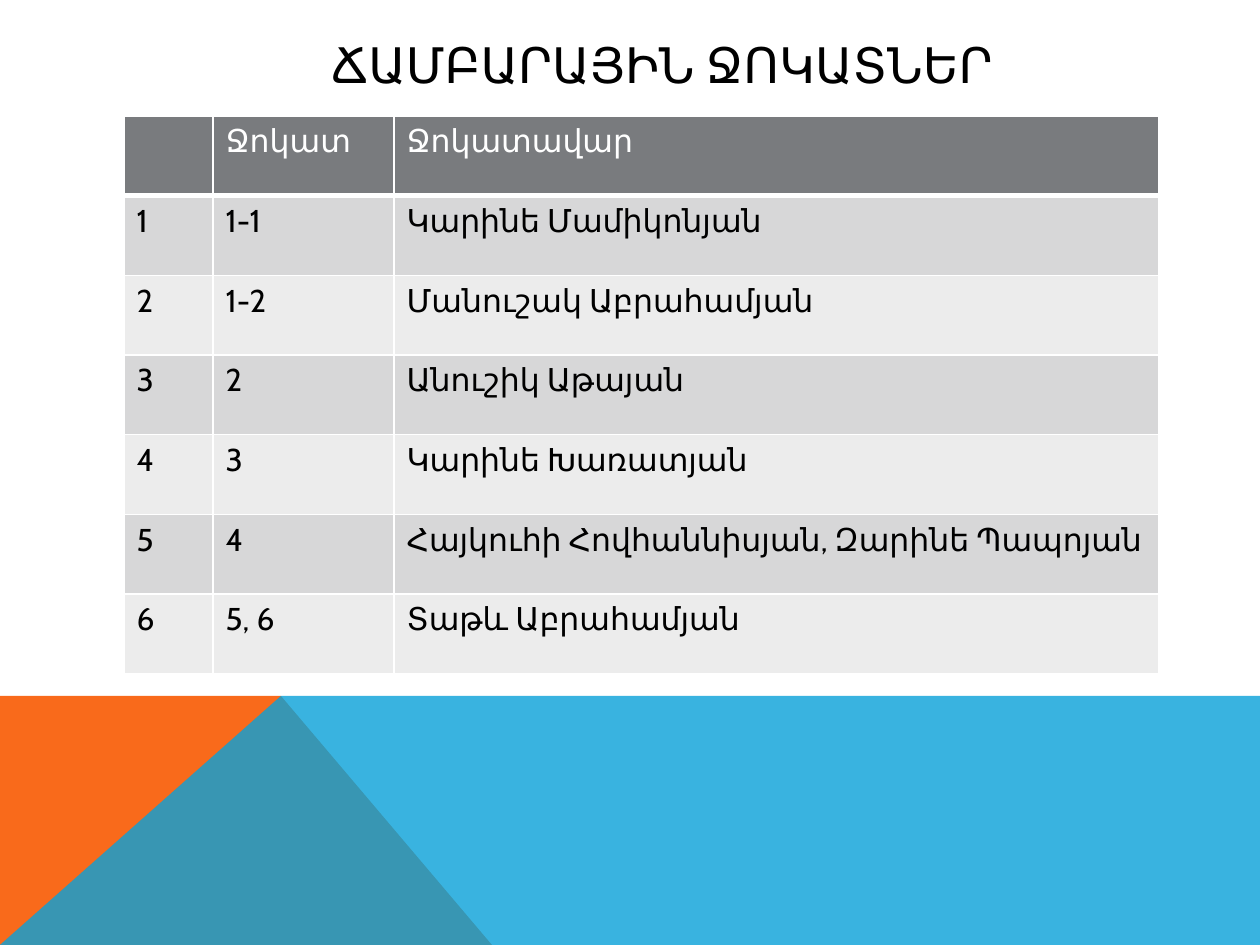
"""Build a slide with the table of camp groups and their leaders."""
from lxml import etree
from pptx import Presentation
from pptx import util as u
from pptx.dml.color import RGBColor
from pptx.enum import text
from pptx.oxml import ns

PX = 914400 / 126
FONT = "Cabin"
COLORS = {
    "white": "FFFFFF",
    "black": "000000",
    "orange": "F96A1B",
    "blue": "08A1D9",
    "header": "797B7E",
    "odd": "D7D7D8",
    "even": "ECECEC",
}
COLUMN_WIDTHS = [89, 181, 765]
HEADER = ["", "Ջոկատ", "Ջոկատավար"]
GROUPS = [
    ("1-1", "Կարինե Մամիկոնյան"),
    ("1-2", "Մանուշակ Աբրահամյան"),
    ("2", "Անուշիկ Աթայան"),
    ("3", "Կարինե Խառատյան"),
    ("4", "Հայկուհի Հովհաննիսյան, Զարինե Պապոյան"),
    ("5, 6", "Տաթև Աբրահամյան"),
]


def px(length):
    return u.Emu(round(length * PX))


def color(name):
    return RGBColor.from_string(COLORS[name])


def add_run(paragraph, words, size, color_name):
    run = paragraph.add_run()
    run.text = words
    run.font.name = FONT
    run.font.size = u.Pt(size)
    run.font.bold = False
    run.font.color.rgb = color(color_name)


def add_polygon(slide, points, color_name, opacity=100):
    builder = slide.shapes.build_freeform(*points[0], scale=PX)
    builder.add_line_segments(points[1:], close=True)
    shape = builder.convert_to_shape()
    shape.shadow.inherit = False
    shape.line.fill.background()
    shape.fill.solid()
    shape.fill.fore_color.rgb = color(color_name)
    if opacity < 100:
        fill_color = shape.element.spPr.find(".//" + ns.qn("a:srgbClr"))
        etree.SubElement(fill_color, ns.qn("a:alpha"), val=str(opacity * 1000))


def add_title(slide, words):
    shape = slide.shapes.add_textbox(px(144), px(26), px(1036), px(76))
    frame = shape.text_frame
    frame.word_wrap = True
    frame.vertical_anchor = text.MSO_ANCHOR.MIDDLE
    paragraph = frame.paragraphs[0]
    paragraph.alignment = text.PP_ALIGN.CENTER
    add_run(paragraph, words, 28, "black")


def set_border(cell, side, points):
    properties = cell._tc.get_or_add_tcPr()
    line = etree.SubElement(properties, ns.qn(f"a:ln{side}"), w=str(u.Pt(points)))
    fill = etree.SubElement(line, ns.qn("a:solidFill"))
    etree.SubElement(fill, ns.qn("a:srgbClr"), val=COLORS["white"])


def fill_cell(cell, words, row_number):
    is_header = row_number == 0
    edges = {"L": 1, "R": 1, "T": 3 if row_number == 1 else 1, "B": 3 if is_header else 1}
    for side, points in edges.items():
        set_border(cell, side, points)
    cell.fill.solid()
    band = "odd" if row_number % 2 else "even"
    cell.fill.fore_color.rgb = color("header" if is_header else band)
    if words:
        add_run(cell.text_frame.paragraphs[0], words, 18, "white" if is_header else "black")


def add_group_table(slide):
    rows = [HEADER] + [[str(number), *group] for number, group in enumerate(GROUPS, 1)]
    frame = slide.shapes.add_table(
        len(rows), len(HEADER), px(124), px(116), px(sum(COLUMN_WIDTHS)), px(558)
    )
    table = frame.table
    for column, width in zip(table.columns, COLUMN_WIDTHS):
        column.width = px(width)
    for row_number, row in enumerate(rows):
        for column_number, words in enumerate(row):
            fill_cell(table.cell(row_number, column_number), words, row_number)


def main():
    presentation = Presentation()
    presentation.slide_width, presentation.slide_height = px(1260), px(945)
    slide = presentation.slides.add_slide(presentation.slide_layouts[6])
    add_polygon(slide, [(0, 945), (0, 696), (281, 696), (492, 945)], "orange")
    add_polygon(slide, [(0, 945), (281, 696), (1260, 696), (1260, 945)], "blue", 80)
    add_title(slide, "ՃԱՄԲԱՐԱՅԻՆ ՋՈԿԱՏՆԵՐ")
    add_group_table(slide)
    presentation.save("out.pptx")


if __name__ == "__main__":
    main()
